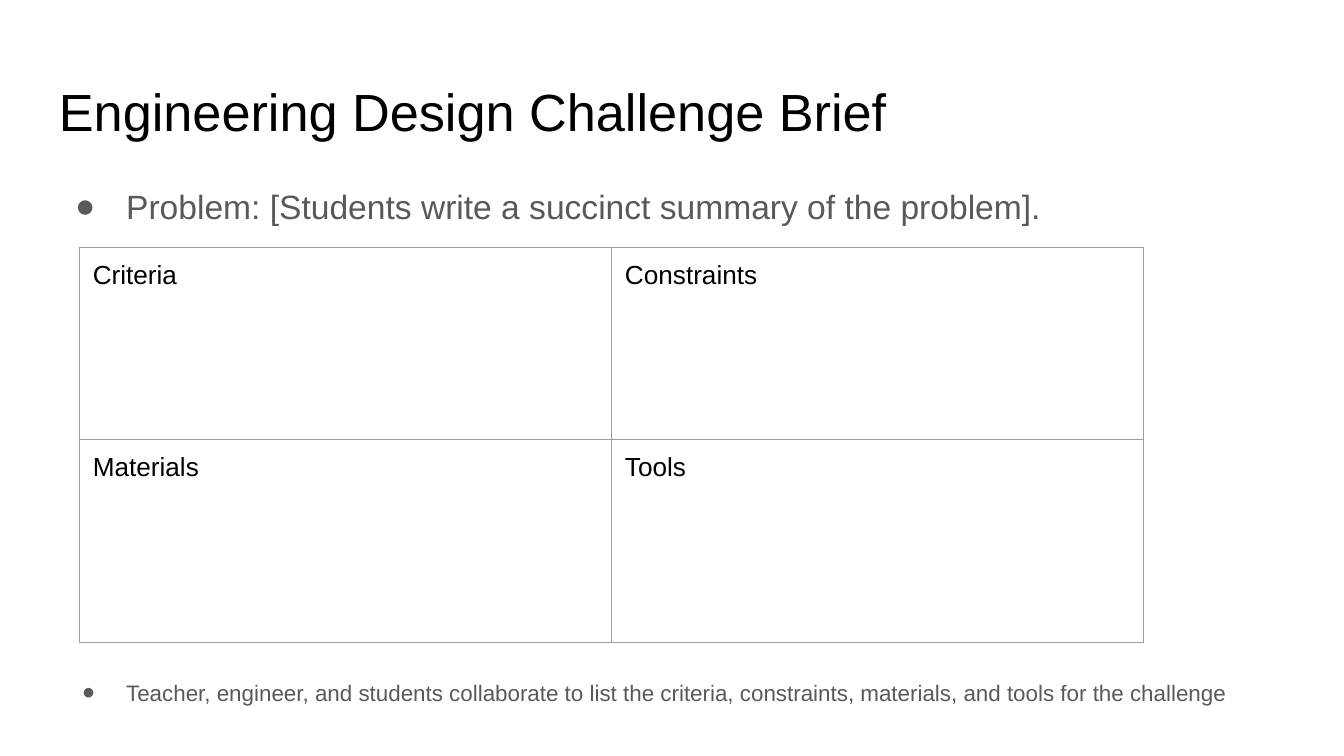
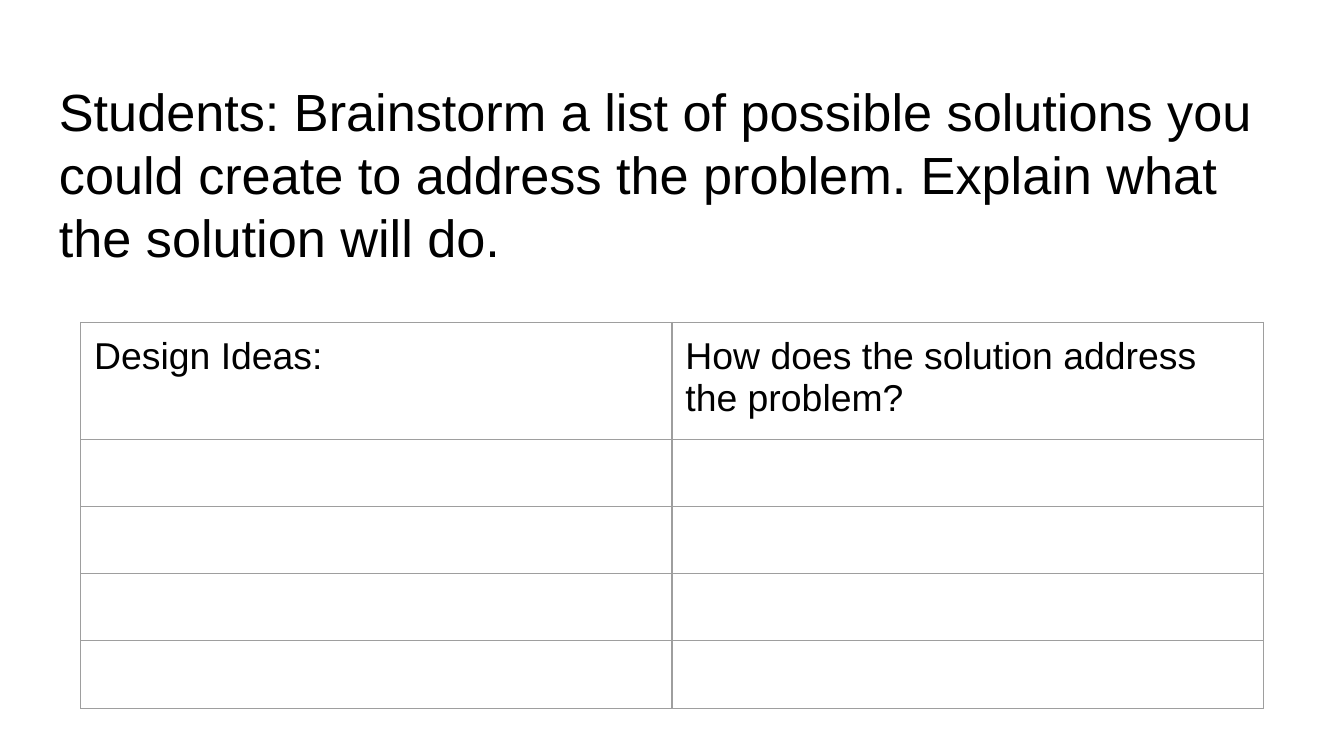
from dataclasses import dataclass
from pptx import Presentation
from pptx.dml.color import RGBColor as RGB
from pptx.enum.text import MSO_ANCHOR as ANCHOR
from pptx.oxml.ns import qn
from pptx.util import Inches, Pt
from lxml.etree import SubElement as Sub


@dataclass(frozen=True)
class Theme:
    font: str = "Arial"
    ink: str = "000000"
    body: str = "595959"
    paper: str = "FFFFFF"
    border: str = "9E9E9E"
    border_width: float = 0.75
    title_size: int = 28
    problem_size: int = 18
    note_size: int = 12
    brief_size: int = 14
    ideas_size: int = 20
    inset: float = 0.1


T = Theme()
TITLE_BOX = (0.34, 0.49, 9.32, 0.63)

SLIDES = [
    {
        "title": "Engineering Design Challenge Brief",
        "bullets": [
            {"text": "Problem: [Students write a succinct summary of the problem].",
             "box": (0.34, 1.24, 9.32, 3.74), "size": T.problem_size, "hang": 0.38},
            {"text": "Teacher, engineer, and students collaborate to list the criteria, "
                     "constraints, materials, and tools for the challenge",
             "box": (0.34, 4.92, 9.22, 0.52), "size": T.note_size, "hang": 0.33},
        ],
        "table": {
            "cells": [("Criteria", "Constraints"), ("Materials", "Tools")],
            "at": (0.59, 1.84), "col": 3.96, "rows": [1.43, 1.51], "size": T.brief_size,
        },
    },
    {
        "title": "Students: Brainstorm a list of possible solutions you could create "
                 "to address the problem. Explain what the solution will do.",
        "bullets": [],
        "table": {
            "cells": [("Design Ideas:", "How does the solution address the problem?")]
                     + [("", "")] * 4,
            "at": (0.6, 2.4), "col": 4.4, "rows": [0.82] + [0.5] * 4, "size": T.ideas_size,
        },
    },
]


def write(tf, text, size, color=T.ink, spacing=1.0, hang=None):
    p = tf.paragraphs[0]
    p.line_spacing = spacing
    p.space_before = p.space_after = Pt(0)
    if hang:
        pPr = p._p.get_or_add_pPr()
        pPr.set("marL", str(Inches(0.5)))
        pPr.set("indent", str(-Inches(hang)))
        Sub(Sub(pPr, qn("a:buClr")), qn("a:srgbClr"), val=color)
        Sub(pPr, qn("a:buSzPts"), val=str(size * 100))
        Sub(pPr, qn("a:buFont"), typeface=T.font)
        Sub(pPr, qn("a:buChar"), char="●")
    if text:
        r = p.add_run()
        r.text = text
        r.font.name, r.font.size = T.font, Pt(size)
        r.font.color.rgb = RGB.from_string(color)


def set_insets(frame):
    frame.margin_left = frame.margin_right = Inches(T.inset)
    frame.margin_top = frame.margin_bottom = Inches(T.inset)


def add_text(s, box, text, **fmt):
    tf = s.shapes.add_textbox(*map(Inches, box)).text_frame
    tf.word_wrap = True
    tf.vertical_anchor = ANCHOR.TOP
    set_insets(tf)
    write(tf, text, **fmt)


def style_cell(cell):
    set_insets(cell)
    tcPr = cell._tc.get_or_add_tcPr()
    for side in ("lnL", "lnR", "lnT", "lnB"):
        ln = Sub(tcPr, qn(f"a:{side}"), w=str(Pt(T.border_width)))
        Sub(Sub(ln, qn("a:solidFill")), qn("a:srgbClr"), val=T.border)
    cell.fill.background()


def add_grid(s, cells, at, col, rows, size):
    n_cols = len(cells[0])
    box = (*at, col * n_cols, sum(rows))
    table = s.shapes.add_table(len(rows), n_cols, *map(Inches, box)).table
    table.first_row = table.horz_banding = False
    for column in table.columns:
        column.width = Inches(col)
    for i, (height, texts) in enumerate(zip(rows, cells)):
        table.rows[i].height = Inches(height)
        for j, text in enumerate(texts):
            cell = table.cell(i, j)
            style_cell(cell)
            write(cell.text_frame, text, size)


def main():
    prs = Presentation()
    prs.slide_width = Inches(10)
    prs.slide_height = prs.slide_width * 9 // 16
    for content in SLIDES:
        s = prs.slides.add_slide(prs.slide_layouts[6])
        s.background.fill.solid()
        s.background.fill.fore_color.rgb = RGB.from_string(T.paper)
        add_text(s, TITLE_BOX, content["title"], size=T.title_size)
        for bullet in content["bullets"]:
            add_text(s, color=T.body, spacing=1.15, **bullet)
        add_grid(s, **content["table"])
    prs.save("out.pptx")


if __name__ == "__main__":
    main()
